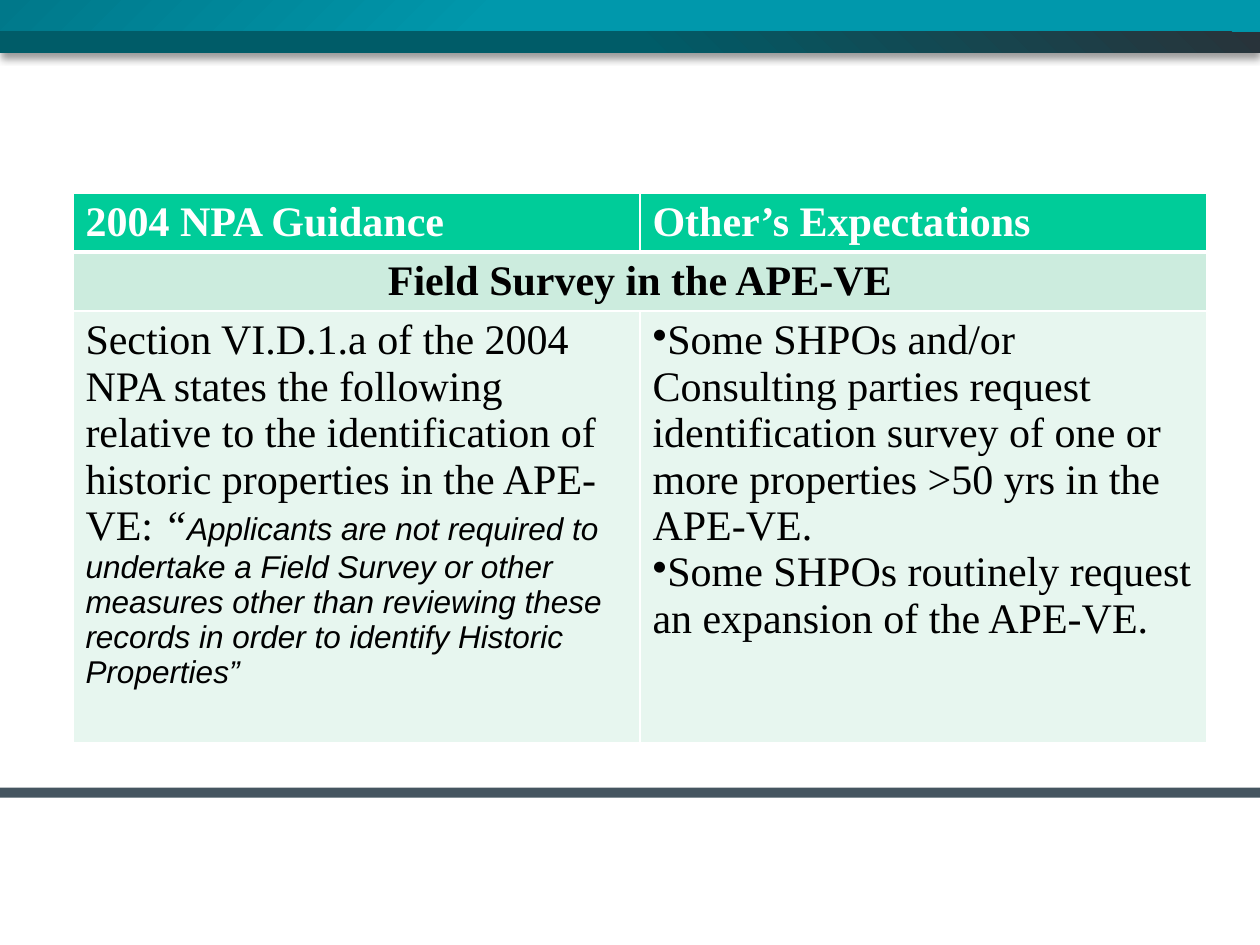
from dataclasses import dataclass

from lxml import etree
from pptx import Presentation
from pptx.dml.color import RGBColor
from pptx.enum.shapes import MSO_SHAPE
from pptx.enum.text import PP_ALIGN
from pptx.oxml.ns import qn
from pptx.util import Cm, Pt

RECTANGLE = MSO_SHAPE.RECTANGLE
LEFT, CENTER = PP_ALIGN.LEFT, PP_ALIGN.CENTER


@dataclass(frozen=True)
class Theme:
    white: str = "FFFFFF"
    black: str = "000000"
    header: str = "00CC99"
    topic: str = "CCECDE"
    body: str = "E7F6EF"
    footer: str = "455560"
    upper_band: tuple = ((0, "00788A"), (0.4, "0098AC"))
    lower_band: tuple = ((0, "28333A"), (0.5, "005C68"))
    serif: str = "Times New Roman"
    sans: str = "Arial"
    main_size: int = 24
    quote_size: int = 18
    thin: int = 1
    thick: int = 3


THEME = Theme()
SLIDE_WIDTH, SLIDE_HEIGHT = Cm(25.4), Cm(19.05)


def rgb(color):
    return RGBColor.from_string(color)


def add_child(parent, tag, **attributes):
    child = etree.SubElement(parent, qn(tag))
    for key, value in attributes.items():
        child.set(key, str(value))
    return child


def add_color(parent, color):
    return add_child(parent, "a:srgbClr", val=color)


# Full-width bands
def add_band(slide, top, height):
    band = slide.shapes.add_shape(RECTANGLE, 0, top, SLIDE_WIDTH, height)
    band.shadow.inherit = False
    band.line.fill.background()
    return band


def add_gradient_band(slide, top, height, stops, mirrored=False):
    band = add_band(slide, top, height)
    band.fill.gradient()
    band.fill.gradient_angle = 315
    for stop, (position, color) in zip(band.fill.gradient_stops, stops):
        stop.position = position
        stop.color.rgb = rgb(color)
    properties = band.element.spPr
    if mirrored:
        properties.find(qn("a:xfrm")).set("flipH", "1")
    # Soft shadow straight below the band
    shadow = add_child(properties.find(qn("a:effectLst")), "a:outerShdw",
                       blurRad=Pt(4), dist=Pt(3), dir=90 * 60000,
                       algn="ctr", rotWithShape=0)
    add_child(add_color(shadow, THEME.black), "a:alpha", val=40000)


# Table cells
def set_borders(cell, top, bottom):
    properties = cell._tc.get_or_add_tcPr()
    widths = {"L": THEME.thin, "R": THEME.thin, "T": top, "B": bottom}
    for side, width in widths.items():
        line = add_child(properties, f"a:ln{side}", w=Pt(width))
        add_color(add_child(line, "a:solidFill"), THEME.white)


def style_cell(cell, fill, top=THEME.thin, bottom=THEME.thin):
    set_borders(cell, top, bottom)
    cell.fill.solid()
    cell.fill.fore_color.rgb = rgb(fill)


def add_bullet(paragraph):
    properties = paragraph._p.get_or_add_pPr()
    properties.set("marL", "0")
    properties.set("indent", "0")
    add_child(properties, "a:buChar", char="•")


def write(paragraph, text, size=THEME.main_size, font=THEME.serif,
          color=THEME.black, bold=False, italic=False, align=LEFT):
    paragraph.alignment = align
    run = paragraph.add_run()
    run.text = text
    run.font.size = Pt(size)
    run.font.name = font
    run.font.bold = bold
    run.font.italic = italic
    run.font.color.rgb = rgb(color)


def add_comparison(slide):
    row_heights = (Cm(1.18), Cm(1.18), Cm(8.71))
    column_width = Cm(11.43)
    comparison = slide.shapes.add_table(
        3, 2, Cm(1.47), Cm(3.89), 2 * column_width, sum(row_heights)).table
    for row, height in zip(comparison.rows, row_heights):
        row.height = height

    # Header row
    for column, heading in enumerate(("2004 NPA Guidance", "Other’s Expectations")):
        header = comparison.cell(0, column)
        style_cell(header, THEME.header, bottom=THEME.thick)
        write(header.text_frame.paragraphs[0], heading, color=THEME.white, bold=True)
        style_cell(comparison.cell(1, column), THEME.topic, top=THEME.thick)
        style_cell(comparison.cell(2, column), THEME.body)

    # Topic across both columns
    topic = comparison.cell(1, 0)
    topic.merge(comparison.cell(1, 1))
    write(topic.text_frame.paragraphs[0], "Field Survey in the APE-VE",
          bold=True, align=CENTER)

    # Guidance with its quotation
    guidance = comparison.cell(2, 0).text_frame.paragraphs[0]
    write(guidance, "Section VI.D.1.a of the 2004 NPA states the following relative "
                    "to the identification of historic properties in the APE-VE: ")
    write(guidance, "“", italic=True)
    write(guidance, "Applicants are not required to undertake a Field Survey or other "
                    "measures other than reviewing these records in order to identify "
                    "Historic Properties”",
          size=THEME.quote_size, font=THEME.sans, italic=True)

    # Expectations as bullets
    expectations = comparison.cell(2, 1).text_frame
    requests = (
        "Some SHPOs and/or Consulting parties request identification survey of one "
        "or more properties >50 yrs in the APE-VE.",
        "Some SHPOs routinely request an expansion of the APE-VE.",
    )
    for index, request in enumerate(requests):
        paragraph = expectations.add_paragraph() if index else expectations.paragraphs[0]
        add_bullet(paragraph)
        write(paragraph, request)


def main():
    presentation = Presentation()
    presentation.slide_width, presentation.slide_height = SLIDE_WIDTH, SLIDE_HEIGHT
    slide = presentation.slides.add_slide(presentation.slide_layouts[6])

    # Header bands and footer rule
    add_gradient_band(slide, 0, Cm(0.64), THEME.upper_band)
    add_gradient_band(slide, Cm(0.64), Cm(0.43), THEME.lower_band, mirrored=True)
    footer_rule = add_band(slide, Cm(15.88), Cm(0.2))
    footer_rule.fill.solid()
    footer_rule.fill.fore_color.rgb = rgb(THEME.footer)

    add_comparison(slide)
    presentation.save("out.pptx")


if __name__ == "__main__":
    main()
